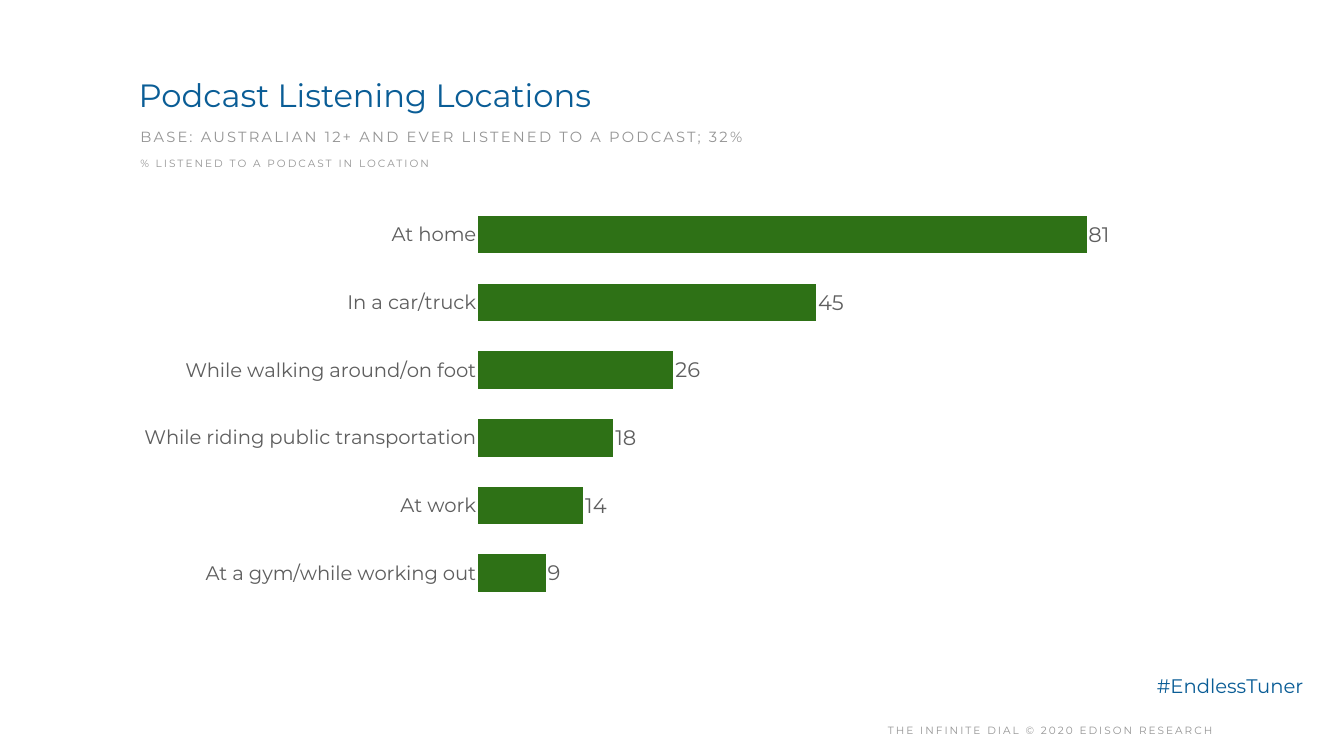
"""Build the podcast listening locations slide."""
from dataclasses import dataclass

from lxml.etree import SubElement
from pptx import Presentation
from pptx.chart.chart import Chart
from pptx.chart.data import CategoryChartData
from pptx.dml.color import RGBColor
from pptx.enum.chart import XL_CHART_TYPE, XL_LABEL_POSITION, XL_TICK_MARK
from pptx.enum.text import MSO_ANCHOR, MSO_AUTO_SIZE, PP_ALIGN
from pptx.oxml.ns import qn
from pptx.shapes.autoshape import Shape
from pptx.slide import Slide
from pptx.text.text import Font
from pptx.util import Pt


@dataclass(frozen=True)
class Theme:
    """Colours, typeface and type sizes."""
    font: str = "Montserrat"
    blue: RGBColor = RGBColor(0x0A, 0x5D, 0x96)
    green: RGBColor = RGBColor(0x2E, 0x71, 0x16)
    grey: RGBColor = RGBColor(0x95, 0x95, 0x95)
    dark: RGBColor = RGBColor(0x5E, 0x5E, 0x5E)
    title: float = 46
    value: float = 30
    label: float = 28
    subtitle: float = 21
    small: float = 15
    chart: float = 10


@dataclass(frozen=True)
class Area:
    """A rectangle in points."""
    left: float
    top: float
    width: float
    height: float


@dataclass(frozen=True)
class Caption:
    """A single line of text and its look."""
    text: str
    area: Area
    size: float
    color: RGBColor
    line_spacing: float = 1.2
    tracking: float = 0
    align: PP_ALIGN = PP_ALIGN.LEFT
    anchor: MSO_ANCHOR = MSO_ANCHOR.MIDDLE


THEME = Theme()
TITLE = Caption("Podcast Listening Locations", Area(192.2, 101.5, 1561.7, 88.6),
                THEME.title, THEME.blue, 1.0, anchor=MSO_ANCHOR.TOP)
CAPTIONS = (
    Caption("THE INFINITE DIAL © 2020 EDISON RESEARCH", Area(1076.4, 1023.1, 848.2, 38.2),
            THEME.small, THEME.grey, tracking=2.9, align=PP_ALIGN.CENTER),
    Caption("#EndlessTuner", Area(1646.6, 954, 236.9, 49),
            THEME.label, THEME.blue, 1.1, anchor=MSO_ANCHOR.TOP),
    Caption("BASE: AUSTRALIAN 12+ AND EVER LISTENED TO A PODCAST; 32%",
            Area(194.4, 172.8, 1623.6, 39.6), THEME.subtitle, THEME.grey, tracking=3.15),
    Caption("% LISTENED TO A PODCAST IN LOCATION", Area(194.4, 214.6, 519.8, 33.1),
            THEME.small, THEME.grey, tracking=2.9),
)
CHART_AREA = Area(105.1, 261.4, 1651, 637.9)
PLOT_LAYOUT = {"layoutTarget": "inner", "xMode": "edge", "yMode": "edge",
               "x": 0.35, "y": 0.04, "w": 0.65, "h": 0.91}
LOCATIONS = {
    "At home": 81,
    "In a car/truck": 45,
    "While walking around/on foot": 26,
    "While riding public transportation": 18,
    "At work": 14,
    "At a gym/while working out": 9,
}


def write_caption(box: Shape, caption: Caption) -> None:
    """Place a box and fill it with a formatted caption."""
    area = caption.area
    box.left, box.top = Pt(area.left), Pt(area.top)
    box.width, box.height = Pt(area.width), Pt(area.height)
    frame = box.text_frame
    frame.text = caption.text
    frame.word_wrap = True
    frame.auto_size = MSO_AUTO_SIZE.NONE
    frame.vertical_anchor = caption.anchor
    frame.margin_left = frame.margin_right = Pt(6)
    frame.margin_top = frame.margin_bottom = Pt(6)
    para = frame.paragraphs[0]
    para.alignment = caption.align
    para.line_spacing = caption.line_spacing
    para.space_before = Pt(0)
    span = para.runs[0]
    style_font(span.font, caption.size, caption.color)
    if caption.tracking:
        span.font._element.set("spc", str(round(caption.tracking * 100)))


def style_font(font: Font, size: float, color: RGBColor) -> None:
    """Apply the theme typeface with a size and colour."""
    font.name = THEME.font
    font.size = Pt(size)
    font.bold = False
    font.color.rgb = color


def set_plot_layout(chart: Chart) -> None:
    """Fix the inner plot area as fractions of the chart."""
    plot_area = chart.element.find(".//" + qn("c:plotArea"))
    for layout in plot_area.findall(qn("c:layout")):
        plot_area.remove(layout)
    layout = SubElement(plot_area, qn("c:layout"))
    plot_area.insert(0, layout)
    manual = SubElement(layout, qn("c:manualLayout"))
    for tag, value in PLOT_LAYOUT.items():
        SubElement(manual, qn(f"c:{tag}")).set("val", str(value))


def add_location_chart(page: Slide, area: Area) -> None:
    """Add the bar chart of listening locations."""
    data = CategoryChartData(number_format="#,##0")
    data.categories = list(LOCATIONS)
    data.add_series("Series 1", list(LOCATIONS.values()))
    chart = page.shapes.add_chart(
        XL_CHART_TYPE.BAR_CLUSTERED, Pt(area.left), Pt(area.top),
        Pt(area.width), Pt(area.height), data).chart
    chart.has_title = False
    chart.has_legend = False
    style_font(chart.font, THEME.chart, THEME.grey)
    set_plot_layout(chart)

    locations = chart.category_axis
    locations.reverse_order = True
    locations.major_tick_mark = XL_TICK_MARK.NONE
    locations.format.line.fill.background()
    style_font(locations.tick_labels.font, THEME.label, THEME.dark)

    percent = chart.value_axis
    percent.minimum_scale, percent.maximum_scale = 0, 100
    percent.major_unit = 20
    percent.has_major_gridlines = False
    percent.visible = False

    plot = chart.plots[0]
    plot.gap_width, plot.overlap = 80, -10
    plot.vary_by_categories = False
    series = plot.series[0]
    series.format.fill.solid()
    series.format.fill.fore_color.rgb = THEME.green
    labels = series.data_labels
    labels.show_value = True
    labels.position = XL_LABEL_POSITION.OUTSIDE_END
    labels.number_format = "#,##0"
    labels.number_format_is_linked = False
    style_font(labels.font, THEME.value, THEME.dark)


def main() -> None:
    """Create and save the deck."""
    deck = Presentation()
    deck.slide_width, deck.slide_height = Pt(1920), Pt(1080)
    page = deck.slides.add_slide(deck.slide_layouts[5])
    write_caption(page.shapes.title, TITLE)
    for caption in CAPTIONS:
        write_caption(page.shapes.add_textbox(0, 0, 0, 0), caption)
    add_location_chart(page, CHART_AREA)
    deck.save("out.pptx")


if __name__ == "__main__":
    main()
